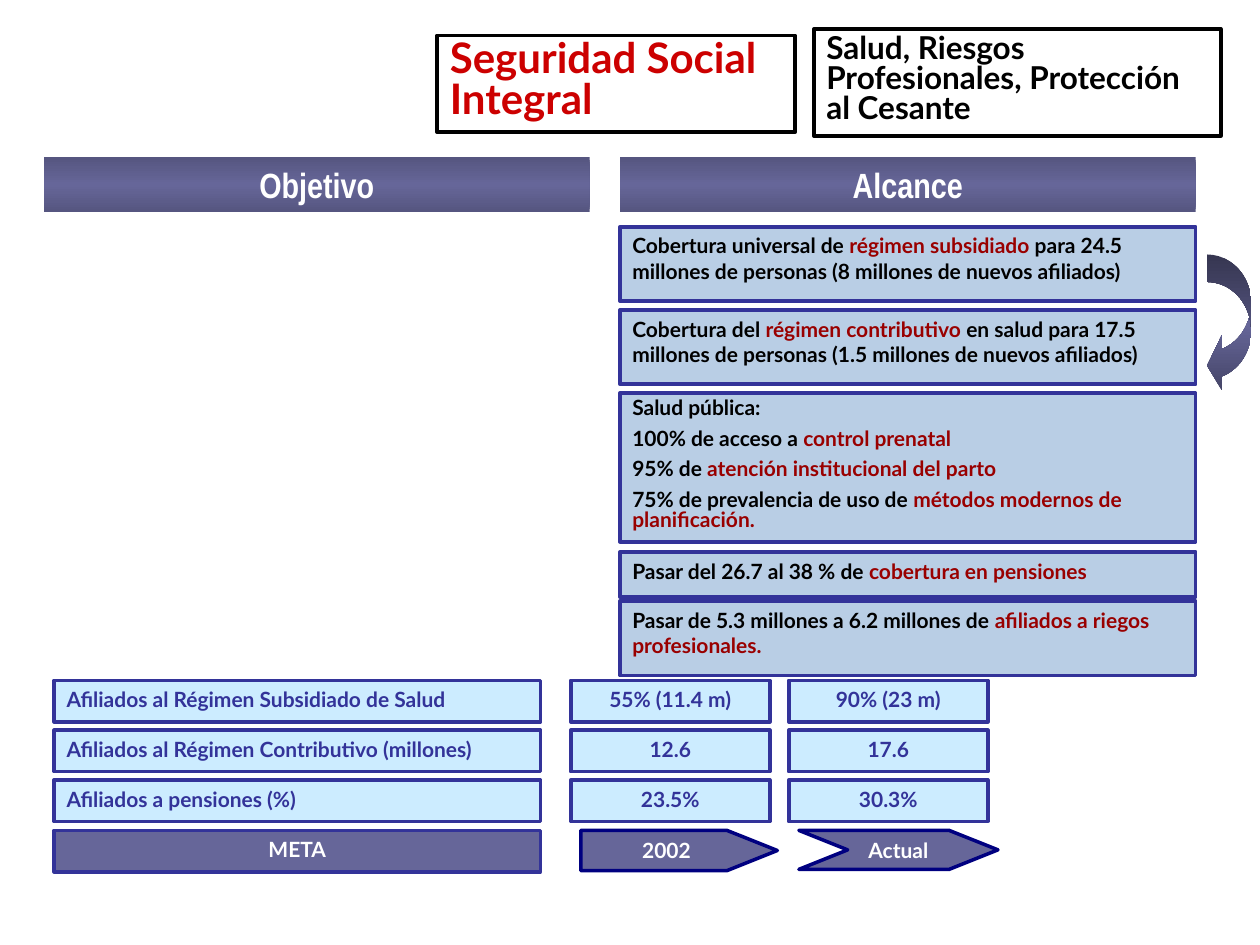
import pptx
import pptx.util
import pptx.dml.color
import pptx.enum.shapes
import pptx.enum.text
from dataclasses import dataclass
from lxml import etree

Inches = pptx.util.Inches
Pt = pptx.util.Pt
Kind = pptx.enum.shapes.MSO_SHAPE
Align = pptx.enum.text.PP_ALIGN
Anchor = pptx.enum.text.MSO_ANCHOR


@dataclass(frozen=True)
class Theme:
    font: str = "Lato"
    header_font: str = "Arial Narrow"
    black: str = "000000"
    white: str = "FFFFFF"
    title_red: str = "CC0000"
    accent_red: str = "990000"
    indigo: str = "333399"
    navy: str = "000080"
    slate: str = "666699"
    header_edge: str = "565680"
    arrow_edge: str = "444466"
    scope_fill: str = "B9CEE5"
    cell_fill: str = "CCECFF"
    title_size: int = 24
    subtitle_size: int = 18
    header_size: int = 20
    text_size: int = 12


theme = Theme()
color = pptx.dml.color.RGBColor.from_string


def style_box(box, fill, line=None, edge=None):
    box.shadow.inherit = False
    if edge:
        box.fill.gradient()
        box.fill.gradient_angle = 90
        stops = box.fill._fill._gradFill.gsLst
        for stop in list(stops):
            stops.remove(stop)
        for position, shade in ((0, edge), (50000, fill), (100000, edge)):
            stop = etree.SubElement(stops, pptx.oxml.ns.qn("a:gs"), pos=str(position))
            etree.SubElement(stop, pptx.oxml.ns.qn("a:srgbClr"), val=shade)
    else:
        box.fill.solid()
        box.fill.fore_color.rgb = color(fill)
    if line:
        box.line.color.rgb = color(line)
        box.line.width = Pt(2)
    else:
        box.line.fill.background()


def write_text(box, paragraphs, size=theme.text_size, font=theme.font,
               align=Align.LEFT, anchor=Anchor.TOP, spacing=None):
    frame = box.text_frame
    frame.word_wrap = True
    frame.auto_size = pptx.enum.text.MSO_AUTO_SIZE.NONE
    frame.vertical_anchor = anchor
    for index, spans in enumerate(paragraphs):
        para = frame.add_paragraph() if index else frame.paragraphs[0]
        para.alignment = align
        if spacing:
            para.line_spacing = spacing
        if index:
            para.space_before = Pt(size / 2)
        for text, shade in spans:
            span = para.add_run()
            span.text = text
            span.font.size = Pt(size)
            span.font.name = font
            span.font.bold = True
            span.font.color.rgb = color(shade)


deck = pptx.Presentation()
deck.slide_width = Inches(10)
deck.slide_height = Inches(7.5)
page = deck.slides.add_slide(deck.slide_layouts[5])
shapes = page.shapes

title = shapes.title
title.left, title.top = Inches(3.47), Inches(0.28)
title.width, title.height = Inches(2.84), Inches(0.77)
title.fill.solid()
title.fill.fore_color.rgb = color(theme.white)
title.line.color.rgb = color(theme.black)
title.line.width = Pt(2)
write_text(title, [[("Seguridad Social Integral", theme.title_red)]],
           theme.title_size, spacing=0.8)

subtitle = shapes.add_shape(Kind.RECTANGLE, Inches(6.46), Inches(0.23), Inches(3.23), Inches(0.85))
style_box(subtitle, theme.white, theme.black)
write_text(subtitle, [[("Salud, Riesgos Profesionales, Protección al Cesante", theme.black)]],
           theme.subtitle_size, spacing=0.8)

for text, left, width in (("Objetivo", 0.35, 4.33), ("Alcance", 4.92, 4.57)):
    header = shapes.add_shape(Kind.RECTANGLE, Inches(left), Inches(1.25), Inches(width), Inches(0.43))
    style_box(header, theme.slate, edge=theme.header_edge)
    write_text(header, [[(text, theme.white)]], theme.header_size, theme.header_font, Align.CENTER)

plain, accent = theme.black, theme.accent_red
scope_items = [
    (1.8, 0.59, None, [[("Cobertura universal de ", plain), ("régimen subsidiado", accent),
        (" para 24.5 millones de personas (8 millones de nuevos afiliados)", plain)]]),
    (2.46, 0.59, None, [[("Cobertura del ", plain), ("régimen contributivo", accent),
        (" en salud para 17.5 millones de personas (1.5 millones de nuevos afiliados)", plain)]]),
    (3.12, 1.18, 0.8, [
        [("Salud pública:", plain)],
        [("100% de acceso a ", plain), ("control prenatal", accent)],
        [("95% de ", plain), ("atención institucional del parto", accent)],
        [("75% de prevalencia de uso de ", plain), ("métodos modernos de planificación.", accent)]]),
    (4.38, 0.36, None, [[("Pasar del 26.7 al 38 % de ", plain), ("cobertura en pensiones", accent)]]),
    (4.77, 0.59, None, [[("Pasar de 5.3 millones a 6.2 millones de ", plain),
        ("afiliados a riegos profesionales.", accent)]]),
]
for top, height, spacing, paragraphs in scope_items:
    scope = shapes.add_shape(Kind.RECTANGLE, Inches(4.92), Inches(top), Inches(4.57), Inches(height))
    style_box(scope, theme.scope_fill, theme.indigo)
    write_text(scope, paragraphs, spacing=spacing)

arrow = shapes.add_shape(Kind.CURVED_LEFT_ARROW, Inches(9.58), Inches(2.02), Inches(0.35), Inches(1.1))
for index, value in enumerate((0.623, 1.245, 0.333)):
    arrow.adjustments[index] = value
style_box(arrow, theme.slate, edge=theme.arrow_edge)

columns = ((0.43, 3.86, Align.LEFT), (4.53, 1.58, Align.CENTER), (6.26, 1.58, Align.CENTER))
indicators = (
    ("Afiliados al Régimen Subsidiado de Salud", "55% (11.4 m)", "90% (23 m)"),
    ("Afiliados al Régimen Contributivo (millones)", "12.6", "17.6"),
    ("Afiliados a pensiones (%)", "23.5%", "30.3%"),
)
for row, values in enumerate(indicators):
    for text, (left, width, align) in zip(values, columns):
        cell = shapes.add_shape(Kind.RECTANGLE, Inches(left), Inches(5.4 + row * 0.395),
                                Inches(width), Inches(0.33))
        style_box(cell, theme.cell_fill, theme.indigo)
        write_text(cell, [[(text, theme.indigo)]], align=align)

footers = (
    ("META", Kind.RECTANGLE, 0.43, 3.86, 0.33, None, theme.indigo, Anchor.TOP),
    ("2002", Kind.PENTAGON, 4.61, 1.56, 0.32, 1.25, theme.navy, Anchor.MIDDLE),
    ("Actual", Kind.CHEVRON, 6.34, 1.58, 0.31, 1.25, theme.navy, Anchor.MIDDLE),
)
for text, kind, left, width, height, point, line, anchor in footers:
    footer = shapes.add_shape(kind, Inches(left), Inches(6.59), Inches(width), Inches(height))
    if point:
        footer.adjustments[0] = point
    style_box(footer, theme.slate, line)
    write_text(footer, [[(text, theme.white)]], align=Align.CENTER, anchor=anchor)

deck.save("out.pptx")
